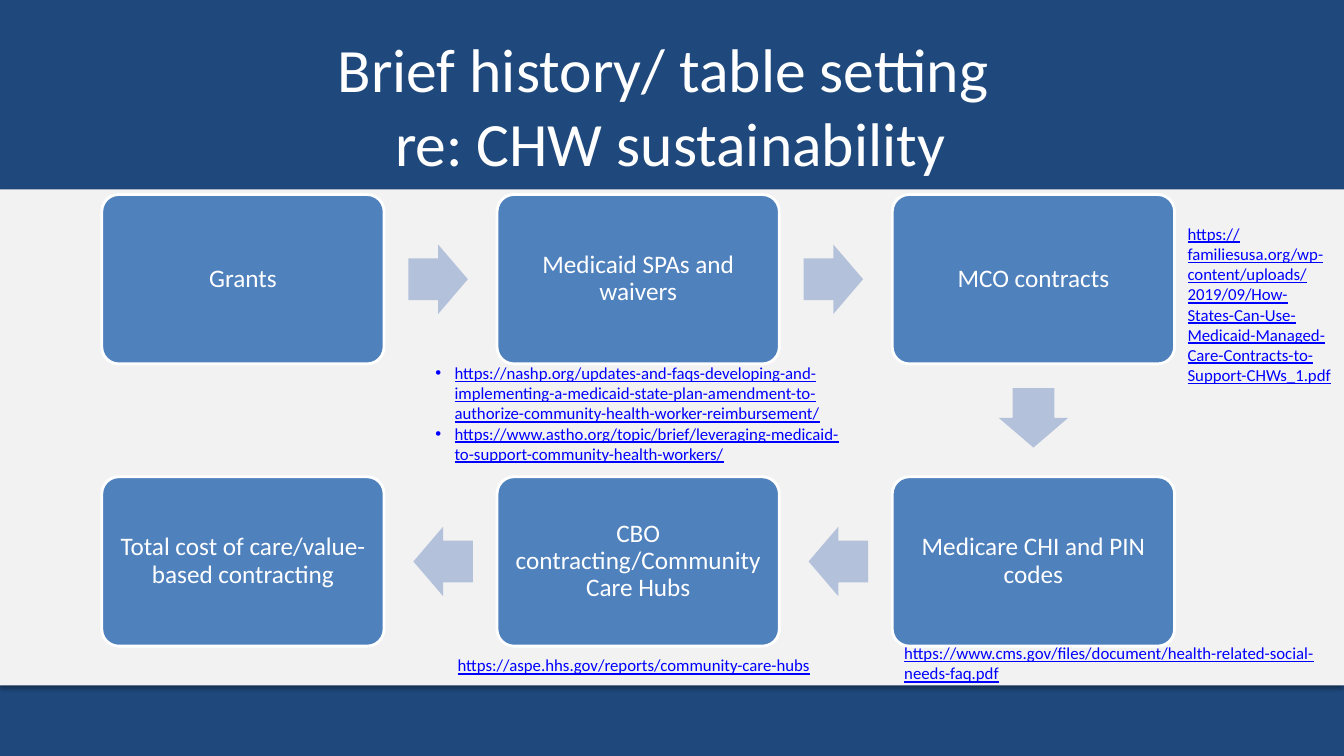
from dataclasses import dataclass
from lxml import etree
from pptx import Presentation
from pptx.dml.color import RGBColor
from pptx.enum.shapes import MSO_SHAPE
from pptx.enum.text import MSO_ANCHOR, PP_ALIGN
from pptx.oxml.ns import qn
from pptx.util import Inches, Pt


@dataclass(frozen=True)
class Theme:
    font: str = "Calibri"
    navy: str = "1F497D"
    band: str = "F2F2F2"
    box: str = "4F81BD"
    arrow: str = "B3C1DB"
    white: str = "FFFFFF"
    link: str = "0000FF"
    title_size: int = 44
    box_size: int = 18
    link_size: int = 12


class SlideBuilder:
    def __init__(self, slide, theme):
        self.slide, self.theme = slide, theme
        bg = slide.background.fill
        bg.solid()
        bg.fore_color.rgb = RGBColor.from_string(theme.navy)

    def shape(self, kind, left, top, width, height, fill, line=None):
        sp = self.slide.shapes.add_shape(
            kind, Inches(left), Inches(top), Inches(width), Inches(height))
        sp.shadow.inherit = False
        sp.fill.solid()
        sp.fill.fore_color.rgb = RGBColor.from_string(fill)
        if line:
            sp.line.color.rgb = RGBColor.from_string(line)
            sp.line.width = Pt(2)
        else:
            sp.line.fill.background()
        return sp

    def run(self, p, text, size, color, underline=None):
        r = p.add_run()
        r.text = text
        r.font.name = self.theme.font
        r.font.size = Pt(size)
        r.font.color.rgb = RGBColor.from_string(color)
        r.font.underline = underline

    def band(self, top, height):
        sp = self.shape(MSO_SHAPE.RECTANGLE, 0, top, 13.33, height, self.theme.band)
        effects = sp._element.spPr.find(qn("a:effectLst"))
        shadow = etree.SubElement(
            effects, qn("a:outerShdw"), blurRad=str(Pt(3.1)), dist=str(Pt(1.8)),
            dir="5400000", rotWithShape="0")
        color = etree.SubElement(shadow, qn("a:srgbClr"), val="000000")
        etree.SubElement(color, qn("a:alpha"), val="35000")

    def text_box(self, left, top, width, height, wrap=True):
        sp = self.slide.shapes.add_textbox(
            Inches(left), Inches(top), Inches(width), Inches(height))
        sp.text_frame.word_wrap = wrap
        return sp.text_frame

    def title(self, lines):
        tf = self.text_box(0.65, 0.22, 12, 1.36)
        tf.margin_top = Inches(0.09)
        p = tf.paragraphs[0]
        p.alignment = PP_ALIGN.CENTER
        for i, line in enumerate(lines):
            if i:
                p.add_line_break()
            self.run(p, line, self.theme.title_size, self.theme.white)

    def step(self, left, top, width, height, text):
        sp = self.shape(MSO_SHAPE.ROUNDED_RECTANGLE, left, top, width, height,
                        self.theme.box, self.theme.white)
        sp.adjustments[0] = 0.1
        tf = sp.text_frame
        tf.word_wrap = True
        tf.vertical_anchor = MSO_ANCHOR.MIDDLE
        tf.margin_left = tf.margin_right = Inches(0.07)
        tf.margin_top = tf.margin_bottom = Inches(0.07)
        p = tf.paragraphs[0]
        p.alignment = PP_ALIGN.CENTER
        p.line_spacing = 0.9
        self.run(p, text, self.theme.box_size, self.theme.white)

    def arrow(self, center_x, center_y, rotation):
        sp = self.shape(MSO_SHAPE.RIGHT_ARROW, center_x - ARROW_W / 2,
                        center_y - ARROW_H / 2, ARROW_W, ARROW_H, self.theme.arrow)
        sp.adjustments[0], sp.adjustments[1] = 0.6, 0.5
        sp.rotation = rotation

    def links(self, left, top, width, height, urls, wrap=True):
        tf = self.text_box(left, top, width, height, wrap)
        for i, url in enumerate(urls):
            p = tf.add_paragraph() if i else tf.paragraphs[0]
            if len(urls) > 1:
                pPr = p._p.get_or_add_pPr()
                pPr.set("marL", str(Inches(0.19)))
                pPr.set("indent", str(-Inches(0.19)))
                etree.SubElement(pPr, qn("a:buFont"), typeface="Arial")
                etree.SubElement(pPr, qn("a:buChar"), char="•")
            self.run(p, url, self.theme.link_size, self.theme.link, True)


# Grid of the flow: three columns, two rows
LEFT, TOP = 1.01, 1.93
BOX_W, BOX_H = 2.8, 1.68
PITCH_X, PITCH_Y = 3.92, 2.8
ARROW_W, ARROW_H, ARROW_GAP = 0.59, 0.69, 0.24

# Steps in order: column, row, direction to the next step
STEPS = [
    ("Grants", 0, 0, (1, 0)),
    ("Medicaid SPAs and waivers", 1, 0, (1, 0)),
    ("MCO contracts", 2, 0, (0, 1)),
    ("Medicare CHI and PIN codes", 2, 1, (-1, 0)),
    ("CBO contracting/Community Care Hubs", 1, 1, (-1, 0)),
    ("Total cost of care/value-based contracting", 0, 1, None),
]
ROTATION = {(1, 0): 0, (0, 1): 90, (-1, 0): 180}

LINKS = [
    (4.22, 3.55, 4.24, 1.11, [
        "https://nashp.org/updates-and-faqs-developing-and-implementing-a-medicaid-state-plan-amendment-to-authorize-community-health-worker-reimbursement/",
        "https://www.astho.org/topic/brief/leveraging-medicaid-to-support-community-health-workers/",
    ], True),
    (11.68, 2.17, 1.64, 1.72, [
        "https://familiesusa.org/wp-content/uploads/2019/09/How-States-Can-Use-Medicaid-Managed-Care-Contracts-to-Support-CHWs_1.pdf",
    ], True),
    (8.87, 6.33, 4.63, 0.5, [
        "https://www.cms.gov/files/document/health-related-social-needs-faq.pdf",
    ], True),
    (4.44, 6.45, 3.77, 0.3, ["https://aspe.hhs.gov/reports/community-care-hubs"], False),
]


def main():
    prs = Presentation()
    prs.slide_width, prs.slide_height = Inches(13.33), Inches(7.5)
    s = SlideBuilder(prs.slides.add_slide(prs.slide_layouts[6]), Theme())

    # Band and title
    s.band(1.88, 4.92)
    s.title(["Brief history/ table setting ", "re: CHW sustainability"])

    # Steps, each followed by the arrow to the next one
    for text, col, row, direction in STEPS:
        x, y = LEFT + col * PITCH_X, TOP + row * PITCH_Y
        s.step(x, y, BOX_W, BOX_H, text)
        if direction:
            dx, dy = direction
            reach = ARROW_GAP + ARROW_W / 2
            s.arrow(x + BOX_W / 2 + dx * (BOX_W / 2 + reach),
                    y + BOX_H / 2 + dy * (BOX_H / 2 + reach), ROTATION[direction])

    # Source links
    for link in LINKS:
        s.links(*link)

    prs.save("out.pptx")


if __name__ == "__main__":
    main()
